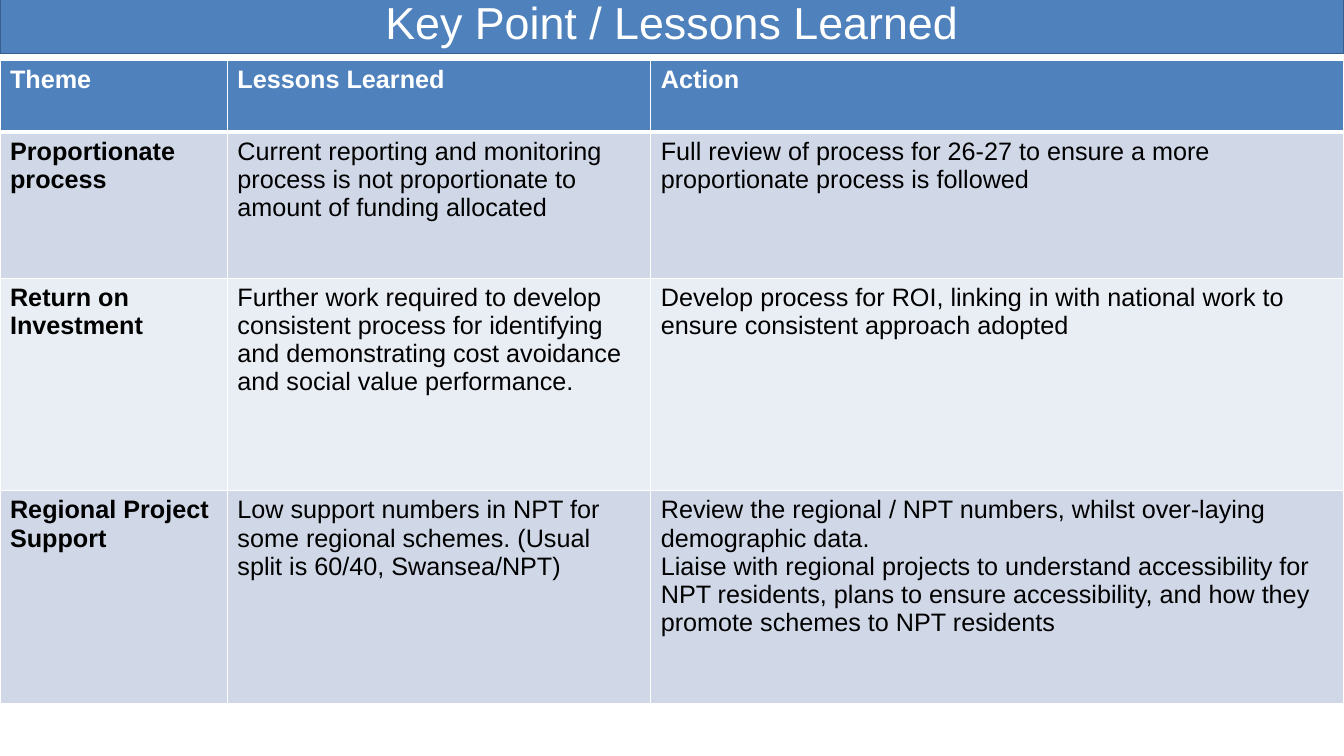
"""Build the lessons learned slide: a title band above a three-column table."""
import dataclasses

import lxml.etree
import pptx
import pptx.dml.color
import pptx.enum.text
import pptx.oxml.ns
import pptx.util

Cm = pptx.util.Cm
Pt = pptx.util.Pt
RGB = pptx.dml.color.RGBColor.from_string


@dataclasses.dataclass(frozen=True)
class Theme:
    font: str = "Arial"
    title_size: int = 32
    table_size: int = 18
    band: str = "4F81BD"
    band_edge: str = "376092"
    light: str = "FFFFFF"
    dark: str = "000000"
    odd_row: str = "D0D8E8"
    even_row: str = "E9EDF4"


theme = Theme()


def style_paragraph(paragraph, size, color, bold):
    paragraph.font.name = theme.font
    paragraph.font.size = Pt(size)
    paragraph.font.bold = bold
    paragraph.font.color.rgb = RGB(color)


def add_borders(cell, widths):
    properties = cell._tc.get_or_add_tcPr()
    for position, (side, width) in enumerate(widths.items()):
        border = lxml.etree.Element(pptx.oxml.ns.qn(f"a:ln{side}"), w=str(Pt(width)))
        fill = lxml.etree.SubElement(border, pptx.oxml.ns.qn("a:solidFill"))
        lxml.etree.SubElement(fill, pptx.oxml.ns.qn("a:srgbClr"), val=theme.light)
        properties.insert(position, border)


presentation = pptx.Presentation()
presentation.slide_width = Cm(33.87)
presentation.slide_height = Cm(19.05)
slide = presentation.slides.add_slide(presentation.slide_layouts[5])

heading = slide.shapes.title
heading.left, heading.top = Cm(0), Cm(-0.28)
heading.width, heading.height = Cm(33.87), Cm(1.63)
heading.fill.solid()
heading.fill.fore_color.rgb = RGB(theme.band)
heading.line.color.rgb = RGB(theme.band_edge)
heading.line.width = Pt(0.75)
heading.text_frame.text = "Key Point / Lessons Learned"
heading.text_frame.auto_size = pptx.enum.text.MSO_AUTO_SIZE.NONE
heading.text_frame.vertical_anchor = pptx.enum.text.MSO_ANCHOR.MIDDLE
heading.text_frame.paragraphs[0].alignment = pptx.enum.text.PP_ALIGN.CENTER
style_paragraph(heading.text_frame.paragraphs[0], theme.title_size, theme.light, False)

lesson_rows = [
    ("Theme", "Lessons Learned", "Action"),
    (
        "Proportionate process",
        "Current reporting and monitoring process is not proportionate to amount of funding allocated",
        "Full review of process for 26-27 to ensure a more proportionate process is followed",
    ),
    (
        "Return on Investment",
        "Further work required to develop consistent process for identifying and demonstrating "
        "cost avoidance and social value performance.",
        "Develop process for ROI, linking in with national work to ensure consistent approach adopted",
    ),
    (
        "Regional Project Support",
        "Low support numbers in NPT for some regional schemes. (Usual split is 60/40, Swansea/NPT)",
        "Review the regional / NPT numbers, whilst over-laying demographic data.\n"
        "Liaise with regional projects to understand accessibility for NPT residents, "
        "plans to ensure accessibility, and how they promote schemes to NPT residents",
    ),
]
column_widths = [5.73, 10.67, 17.47]
row_heights = [1.8, 3.68, 5.36, 5.36]

lessons = slide.shapes.add_table(
    len(row_heights), len(column_widths),
    Cm(0), Cm(1.53), Cm(sum(column_widths)), Cm(sum(row_heights)),
).table
for column, width in zip(lessons.columns, column_widths):
    column.width = Cm(width)
for row, height in zip(lessons.rows, row_heights):
    row.height = Cm(height)

for row_number, texts in enumerate(lesson_rows):
    is_header = row_number == 0
    row_fill = theme.band if is_header else theme.odd_row if row_number % 2 else theme.even_row
    for column_number, text in enumerate(texts):
        cell = lessons.cell(row_number, column_number)
        cell.text = text
        cell.fill.solid()
        cell.fill.fore_color.rgb = RGB(row_fill)
        add_borders(cell, {
            "L": 1,
            "R": 1,
            "T": 3 if row_number == 1 else 1,
            "B": 3 if is_header else 1,
        })
        for paragraph in cell.text_frame.paragraphs:
            style_paragraph(
                paragraph,
                theme.table_size,
                theme.light if is_header else theme.dark,
                is_header or column_number == 0,
            )

presentation.save("out.pptx")
